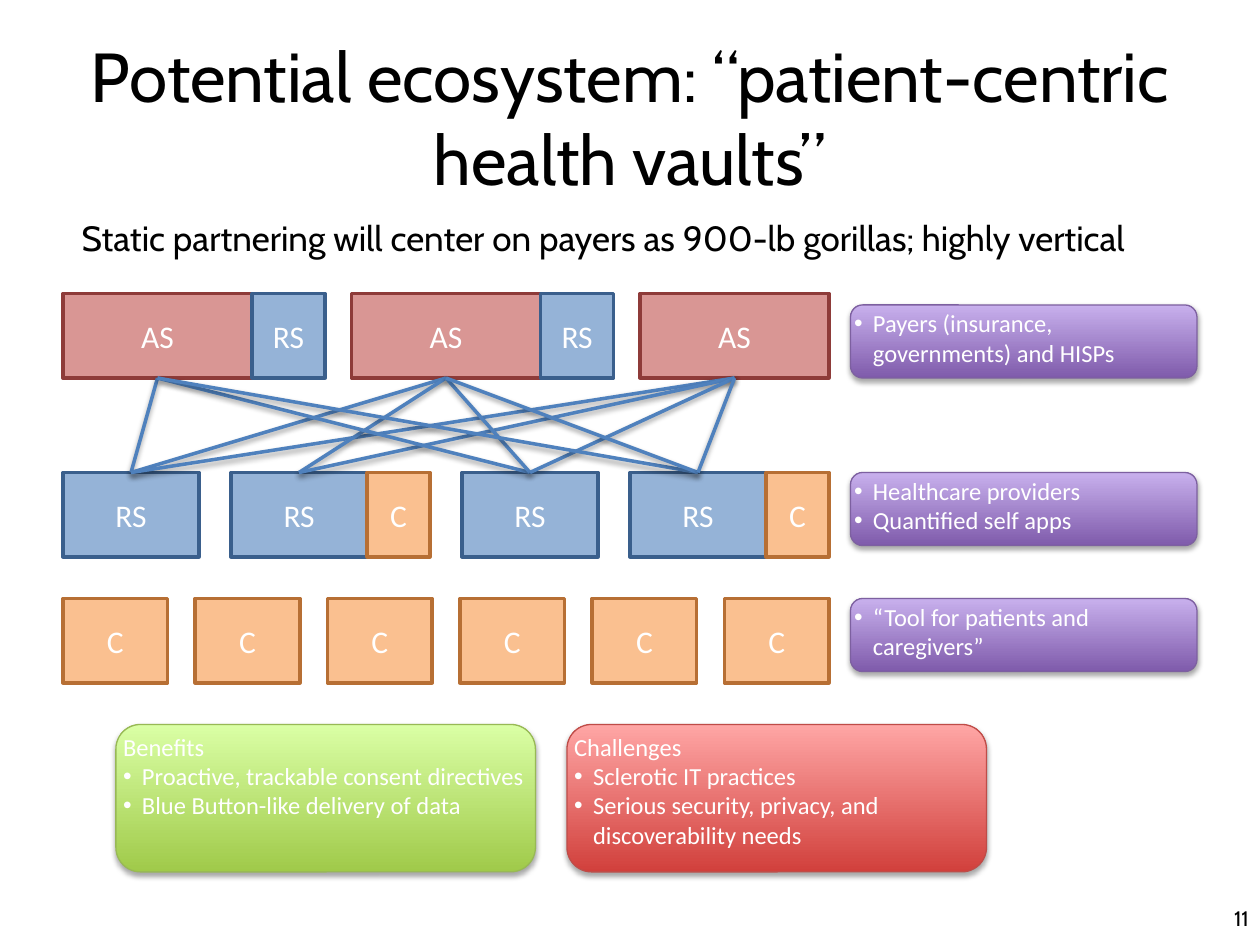
"""Build the slide on a patient-centric health vault ecosystem."""
from lxml.etree import SubElement as Sub
from pptx import Presentation
from pptx.dml.color import RGBColor as RGB
from pptx.enum.shapes import MSO_CONNECTOR as Conn, MSO_SHAPE as Shape
from pptx.enum.text import MSO_ANCHOR as Anchor, PP_ALIGN as Align
from pptx.oxml.ns import qn
from pptx.util import Inches, Pt

HEX = {"black": "000000", "white": "FFFFFF", "link": "4F81BD"}
NODE = {"AS": ("D99694", "8E3B39"), "RS": ("95B3D7", "3A5F8C"), "C": ("FAC090", "B76F34")}
CARD = {
    "purple": ("7F5BAB", "C8B0ED", "7D60A0"),
    "green": ("A0CA4A", "DAFFA5", "98B955"),
    "red": ("D1403C", "FFA6A5", "BF4C48"),
}
LEFT, SPAN, HIGH = 0.5, 6.08, 0.67

TEXTS = [
    ("Potential ecosystem: “patient-centric health vaults”",
     (0.5, 0.3, 9, 1.25), 39.6, Align.CENTER, Anchor.MIDDLE),
    ("11", (9.62, 7.14, 0.39, 0.4), 12, Align.RIGHT, Anchor.TOP),
    ("Static partnering will center on payers as 900-lb gorillas; highly vertical",
     (0.55, 1.67, 8.5, 0.42), 20, Align.LEFT, Anchor.TOP),
]
ROWS = [
    (2.33, [[("AS", 1.5), ("RS", 0.58)], [("AS", 1.5), ("RS", 0.58)], [("AS", 1.5)]]),
    (3.75, [[("RS", 1.08)], [("RS", 1.08), ("C", 0.5)]] * 2),
    (4.75, [[("C", 0.83)]] * 6),
]
LINKS = [(0, 1, 2), (1, 2), (0, 1, 2), (0, 1, 2)]
CARDS = [
    ("purple", (6.75, 2.42, 2.75, 0.58), None, ["Payers (insurance, governments) and HISPs"]),
    ("purple", (6.75, 3.75, 2.75, 0.58), None, ["Healthcare providers", "Quantified self apps"]),
    ("purple", (6.75, 4.75, 2.75, 0.58), None, ["“Tool for patients and caregivers”"]),
    ("green", (0.92, 5.75, 3.33, 1.17), "Benefits",
     ["Proactive, trackable consent directives", "Blue Button-like delivery of data"]),
    ("red", (4.5, 5.75, 3.33, 1.17), "Challenges",
     ["Sclerotic IT practices", "Serious security, privacy, and discoverability needs"]),
]


def rgb(code):
    return RGB.from_string(code)


def write(para, text, size, face="Calibri", tint="white"):
    run = para.add_run()
    run.text = text
    run.font.size, run.font.name = Pt(size), face
    run.font.color.rgb = rgb(HEX[tint])


def stroke(item, code, width):
    item.line.color.rgb = rgb(code)
    item.line.width = Pt(width)


def shade(item, dist, alpha):
    glow = Sub(Sub(item._element.spPr, qn("a:effectLst")), qn("a:outerShdw"),
               blurRad=str(Pt(3.1)), dist=str(Pt(dist)), dir="5400000", rotWithShape="0")
    Sub(Sub(glow, qn("a:srgbClr"), val=HEX["black"]), qn("a:alpha"), val=str(alpha * 1000))


def label(slide, text, spot, size, align, anchor):
    frame = slide.shapes.add_textbox(*map(Inches, spot)).text_frame
    frame.word_wrap, frame.vertical_anchor = True, anchor
    para = frame.paragraphs[0]
    para.alignment = align
    write(para, text, size, "Cabin", "black")


def node(slide, kind, x, y, wide):
    box = slide.shapes.add_shape(Shape.RECTANGLE, *map(Inches, (x, y, wide, HIGH)))
    fill, edge = NODE[kind]
    box.fill.solid()
    box.fill.fore_color.rgb = rgb(fill)
    stroke(box, edge, 2)
    box.shadow.inherit = False
    frame = box.text_frame
    frame.vertical_anchor = Anchor.MIDDLE
    para = frame.paragraphs[0]
    para.alignment = Align.CENTER
    write(para, kind, 18)
    return box


def row(slide, y, groups):
    used = sum(wide for group in groups for _, wide in group)
    gap = (SPAN - used) / (len(groups) - 1)
    x, heads = LEFT, []
    for group in groups:
        boxes = []
        for kind, wide in group:
            boxes.append(node(slide, kind, x, y, wide))
            x += wide
        heads.append(boxes[0])
        x += gap
    return heads


def link(slide, low, top):
    line = slide.shapes.add_connector(Conn.STRAIGHT, 0, 0, 0, 0)
    line.begin_connect(low, 0)
    line.end_connect(top, 2)
    stroke(line, HEX["link"], 2)
    shade(line, 1.6, 38)


def card(slide, tone, spot, head, items):
    box = slide.shapes.add_shape(Shape.ROUNDED_RECTANGLE, *map(Inches, spot))
    *stops, edge = CARD[tone]
    box.fill.gradient()
    box.fill.gradient_angle = 90
    for stop, code in zip(box.fill.gradient_stops, stops):
        stop.color.rgb = rgb(code)
    stroke(box, edge, 0.75)
    shade(box, 1.8, 35)
    frame = box.text_frame
    frame.word_wrap, frame.vertical_anchor = True, Anchor.TOP
    frame.margin_left = frame.margin_right = frame.margin_top = frame.margin_bottom = 0
    lines = [(head, False)] if head else []
    lines += [(item, True) for item in items]
    for i, (text, dot) in enumerate(lines):
        para = frame.add_paragraph() if i else frame.paragraphs[0]
        para.alignment = Align.LEFT
        if dot:
            props = para._p.get_or_add_pPr()
            props.set("marL", str(Inches(0.15)))
            props.set("indent", str(Inches(-0.15)))
            Sub(props, qn("a:buFont"), typeface="Arial")
            Sub(props, qn("a:buChar"), char="•")
        write(para, text, 14)


def main():
    deck = Presentation()
    deck.slide_width, deck.slide_height = Inches(10), Inches(7.5)
    slide = deck.slides.add_slide(deck.slide_layouts[6])
    for text in TEXTS:
        label(slide, *text)
    tops, lows, _ = [row(slide, y, groups) for y, groups in ROWS]
    for low, ends in zip(lows, LINKS):
        for end in ends:
            link(slide, low, tops[end])
    for item in CARDS:
        card(slide, *item)
    deck.save("out.pptx")


if __name__ == "__main__":
    main()
